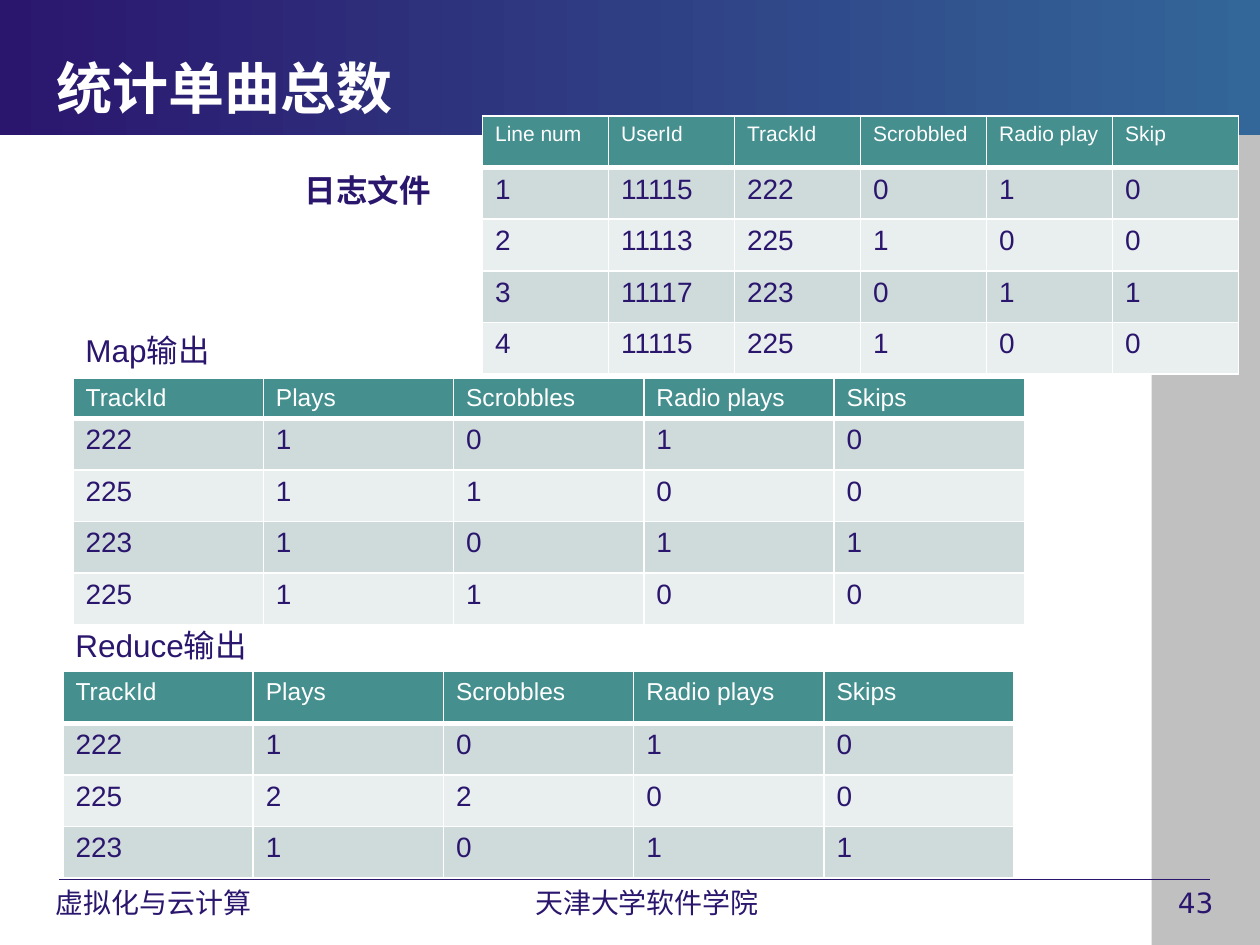
"""Build the slide that counts plays per track with three tables."""
from pptx import Presentation
from pptx.dml.color import RGBColor
from pptx.enum.shapes import MSO_CONNECTOR, MSO_SHAPE
from pptx.enum.text import MSO_ANCHOR, PP_ALIGN
from pptx.oxml import parse_xml
from pptx.oxml.ns import nsdecls
from pptx.util import Inches, Pt
from lxml.etree import SubElement

COLORS = {key: RGBColor.from_string(value) for key, value in {
    "ink": "2B166E", "blue": "336699", "white": "FFFFFF", "gray": "C0C0C0",
    "head": "458F8F", "dark": "CFDBDB", "light": "E9EEEE"}.items()}


def style(para, size, color="ink", face="Arial", bold=False, align=PP_ALIGN.LEFT):
    para.font.size = Pt(size)
    para.font.name = face
    para.font.bold = bold
    para.font.color.rgb = COLORS[color]
    para.alignment = align


def grid(left, top, width, heights, size, rows):
    frame = slide.shapes.add_table(
        len(rows), len(rows[0]), Inches(left), Inches(top),
        Inches(width * len(rows[0])), Inches(sum(heights)))
    table = frame.table
    for col in table.columns:
        col.width = Inches(width)
    for r, row in enumerate(rows):
        table.rows[r].height = Inches(heights[r])
        for c, word in enumerate(row):
            cell = table.cell(r, c)
            cell.text = word
            para = cell.text_frame.paragraphs[0]
            style(para, 16 if r else size, "ink" if r else "white")
            props = cell._tc.get_or_add_tcPr()
            for side in "LRTB":
                wide = Pt(3 if side == "B" and r == 0 else 1)
                props.append(parse_xml(
                    f'<a:ln{side} {nsdecls("a")} w="{wide}"><a:solidFill>'
                    f'<a:srgbClr val="{COLORS["white"]}"/></a:solidFill></a:ln{side}>'))
            cell.fill.solid()
            shade = ("dark" if r % 2 else "light") if r else "head"
            cell.fill.fore_color.rgb = COLORS[shade]


deck = Presentation()
deck.slide_width = Inches(10)
deck.slide_height = Inches(7.5)
slide = deck.slides.add_slide(deck.slide_layouts[5])
shapes = slide.shapes

side = shapes.add_shape(MSO_SHAPE.RECTANGLE, Inches(9.14), Inches(1.07),
                        Inches(0.86), Inches(6.43))
side.fill.solid()
side.fill.fore_color.rgb = COLORS["gray"]

rule = shapes.add_connector(MSO_CONNECTOR.STRAIGHT, Inches(0.47), Inches(6.98),
                            Inches(9.6), Inches(6.98))
rule.line.color.rgb = COLORS["ink"]
rule.line.width = Pt(0.75)
SubElement(rule._element.spPr,
           "{http://schemas.openxmlformats.org/drawingml/2006/main}effectLst")

band = shapes.add_shape(MSO_SHAPE.RECTANGLE, 0, 0, Inches(10), Inches(1.07))
band.fill.gradient()
band.fill.gradient_angle = 0
for stop, spot, key in zip(band.fill.gradient_stops, (0, 1), ("ink", "blue")):
    stop.position = spot
    stop.color.rgb = COLORS[key]

for block in (side, band):
    block.line.fill.background()
    block.shadow.inherit = False

title = shapes.title
title.left, title.top = Inches(0.35), Inches(0.36)
title.width, title.height = Inches(8.44), Inches(0.67)
title.text_frame.text = "统计单曲总数"
title.text_frame.vertical_anchor = MSO_ANCHOR.MIDDLE
style(title.text_frame.paragraphs[0], 32, "white", "DejaVu Sans", True)
shapes._spTree.append(title._element)

plays = ["TrackId", "Plays", "Scrobbles", "Radio plays", "Skips"]
grid(0.58, 3, 1.51, [0.31] + [0.41] * 4, 14, [
    plays,
    ["222", "1", "0", "1", "0"],
    ["225", "1", "1", "0", "0"],
    ["223", "1", "0", "1", "1"],
    ["225", "1", "1", "0", "0"]])
grid(0.5, 5.33, 1.51, [0.41] * 4, 14, [
    plays,
    ["222", "1", "0", "1", "0"],
    ["225", "2", "2", "0", "0"],
    ["223", "1", "0", "1", "1"]])
grid(3.83, 0.92, 1, [0.41] * 5, 12, [
    ["Line num", "UserId", "TrackId", "Scrobbled", "Radio play", "Skip"],
    ["1", "11115", "222", "0", "1", "0"],
    ["2", "11113", "225", "1", "0", "0"],
    ["3", "11117", "223", "0", "1", "1"],
    ["4", "11115", "225", "1", "0", "0"]])

sans, mid = "DejaVu Sans", PP_ALIGN.CENTER
for word, left, top, width, height, size, face, bold, align in (
        ("43", 9.25, 6.98, 0.71, 0.35, 16, sans, False, PP_ALIGN.LEFT),
        ("虚拟化与云计算", 0.25, 6.98, 1.94, 0.35, 16, sans, False, mid),
        ("天津大学软件学院", 4.01, 6.98, 2.25, 0.35, 16, sans, False, mid),
        ("Map输出", 0.58, 2.58, 1.33, 0.4, 18, "Arial", False, PP_ALIGN.LEFT),
        ("Reduce输出", 0.5, 4.92, 2.08, 0.4, 18, "Arial", False, PP_ALIGN.LEFT),
        ("日志文件", 2.32, 1.31, 1.34, 0.4, 18, "Arial", True, PP_ALIGN.LEFT)):
    box = shapes.add_textbox(Inches(left), Inches(top), Inches(width), Inches(height))
    box.text_frame.word_wrap = True
    box.text_frame.text = word
    style(box.text_frame.paragraphs[0], size, "ink", face, bold, align)

deck.save("out.pptx")
